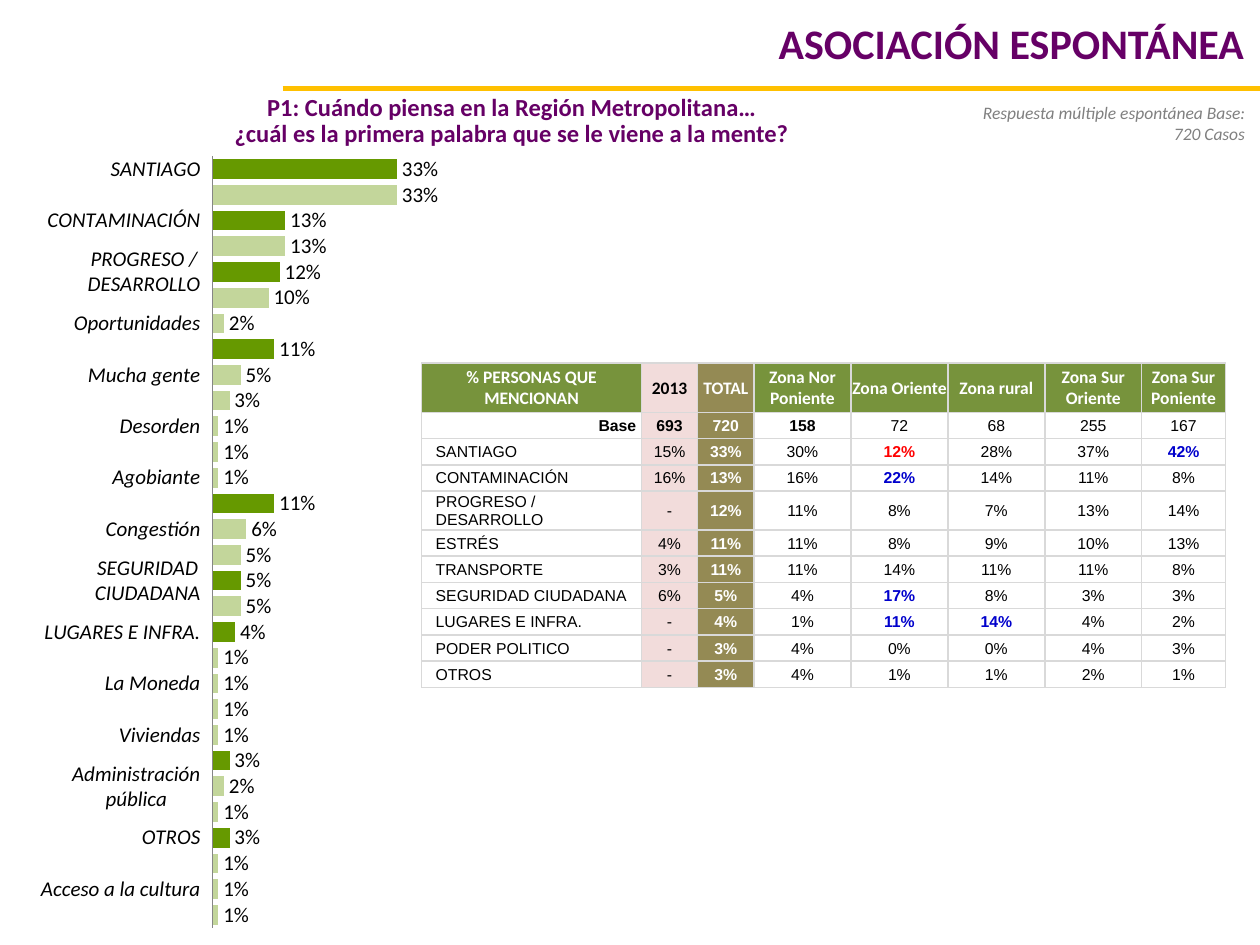
from lxml.etree import SubElement
from pptx import Presentation
from pptx.chart.data import CategoryChartData
from pptx.dml.color import RGBColor
from pptx.enum.chart import XL_CHART_TYPE as ChartType
from pptx.enum.chart import XL_LABEL_POSITION as LabelPos
from pptx.enum.chart import XL_TICK_LABEL_POSITION as TickPos
from pptx.enum.chart import XL_TICK_MARK as TickMark
from pptx.enum.shapes import MSO_CONNECTOR as Connector
from pptx.enum.text import MSO_ANCHOR as Anchor
from pptx.enum.text import PP_ALIGN as Align
from pptx.oxml import parse_xml
from pptx.oxml.ns import nsdecls, qn
from pptx.util import Pt

COLORS = {
    "purple": "660066", "gold": "FFC000", "gray": "808080", "axis": "868686",
    "black": "000000", "white": "FFFFFF", "dark_bar": "669900", "light_bar": "C3D69B",
    "header": "77933C", "year": "F2DCDB", "total": "948A54", "border": "D9D9D9",
    "low": "FF0000", "high": "0000CC",
}

MENTIONS = [
    ("SANTIAGO", 33), ("Santiago", 33), ("CONTAMINACIÓN", 13),
    ("Contaminación ambiental", 13), ("PROGRESO / DESARROLLO", 12),
    ("Ciudad en progreso", 10), ("Oportunidades", 2), ("ESTRÉS", 11),
    ("Mucha gente", 5), ("Locura", 3), ("Desorden", 1), ("Rapidez", 1),
    ("Agobiante", 1), ("TRANSPORTE", 11), ("Congestión", 6), ("Locomoción", 5),
    ("SEGURIDAD CIUDADANA", 5), ("Delincuencia", 5), ("LUGARES E INFRA.", 4),
    ("Cerros y parques", 1), ("La Moneda", 1), ("Sectores de Santiago", 1),
    ("Viviendas", 1), ("PODER POLÍTICO", 3), ("Administración pública", 2),
    ("Gobernantes", 1), ("OTROS", 3), ("Calor", 1), ("Acceso a la cultura", 1),
    ("Inclusión social", 1),
]

ZONES = [
    ["% PERSONAS QUE MENCIONAN", "2013", "TOTAL", "Zona Nor Poniente",
     "Zona Oriente", "Zona rural", "Zona Sur Oriente", "Zona Sur Poniente"],
    ["Base", "693", "720", "158", "72", "68", "255", "167"],
    ["SANTIAGO", "15%", "33%", "30%", "12%", "28%", "37%", "42%"],
    ["CONTAMINACIÓN", "16%", "13%", "16%", "22%", "14%", "11%", "8%"],
    ["PROGRESO / DESARROLLO", "-", "12%", "11%", "8%", "7%", "13%", "14%"],
    ["ESTRÉS", "4%", "11%", "11%", "8%", "9%", "10%", "13%"],
    ["TRANSPORTE", "3%", "11%", "11%", "14%", "11%", "11%", "8%"],
    ["SEGURIDAD CIUDADANA", "6%", "5%", "4%", "17%", "8%", "3%", "3%"],
    ["LUGARES E INFRA.", "-", "4%", "1%", "11%", "14%", "4%", "2%"],
    ["PODER POLITICO", "-", "3%", "4%", "0%", "0%", "4%", "3%"],
    ["OTROS", "-", "3%", "4%", "1%", "1%", "2%", "1%"],
]
COLUMN_WIDTHS = [125.5, 32.2, 32.2] + [55.4] * 4 + [47.8]
HIGHLIGHTS = {(2, 4): "low", (2, 7): "high", (3, 4): "high",
              (7, 4): "high", (8, 4): "high", (8, 5): "high"}


def rgb(name):
    return RGBColor.from_string(COLORS[name])


def set_font(font, color, **formats):
    for key, value in formats.items():
        setattr(font, key, value)
    font.color.rgb = rgb(color)


def paint(fill, color):
    fill.solid()
    fill.fore_color.rgb = rgb(color)


def add_text(s, box, lines, align, anchor, color, para, **formats):
    tf = s.shapes.add_textbox(*map(Pt, box)).text_frame
    tf.word_wrap = True
    tf.vertical_anchor = anchor
    for i, line in enumerate(lines):
        p = tf.paragraphs[0] if i == 0 else tf.add_paragraph()
        p.alignment = align
        for key, value in para.items():
            if i or key != "space_before":
                setattr(p, key, value)
        r = p.add_run()
        r.text = line
        set_font(r.font, color, name="Calibri", **formats)


def add_heading(s, box):
    left, top, width, height = box
    add_text(s, (left + 58, top, width - 60, 49), ["ASOCIACIÓN ESPONTÁNEA"],
             Align.RIGHT, Anchor.MIDDLE, "purple", {}, size=Pt(24), bold=True)
    rule = s.shapes.add_connector(
        Connector.STRAIGHT, Pt(left + 161.5), Pt(top + 50.4),
        Pt(left + width), Pt(top + 50.4))
    rule.line.color.rgb = rgb("gold")
    rule.line.width = Pt(3)
    SubElement(rule._element.spPr, qn("a:effectLst"))
    question = ["P1: Cuándo piensa en la Región Metropolitana…",
                "¿cuál es la primera palabra que se le viene a la mente?"]
    add_text(s, (left + 48.5, top + 54, 488, 34.5), question, Align.CENTER,
             Anchor.TOP, "purple", {"line_spacing": Pt(12), "space_before": Pt(2.8)},
             size=Pt(14), bold=True)
    add_text(s, (left + 541.5, top + 54.7, 177, 31.5),
             ["Respuesta múltiple espontánea Base: 720 Casos"], Align.RIGHT,
             Anchor.TOP, "gray", {}, size=Pt(10), italic=True)


def add_mentions_chart(s, box):
    data = CategoryChartData(number_format="###0%")
    data.categories = [name for name, _ in MENTIONS]
    data.add_series("Series 1", [value / 100 for _, value in MENTIONS])
    chart = s.shapes.add_chart(ChartType.BAR_CLUSTERED, *map(Pt, box), data).chart
    chart.has_legend = chart.has_title = False
    set_font(chart.font, "black", name="Calibri", size=Pt(12))

    axis = chart.category_axis
    for key, value in {"reverse_order": True, "has_major_gridlines": False,
                       "major_tick_mark": TickMark.NONE,
                       "tick_label_position": TickPos.LOW}.items():
        setattr(axis, key, value)
    set_font(axis.tick_labels.font, "black", name="Calibri", size=Pt(12), italic=True)
    axis.format.line.color.rgb = rgb("axis")
    for key, value in {"visible": False, "minimum_scale": 0, "maximum_scale": 0.6,
                       "has_major_gridlines": False}.items():
        setattr(chart.value_axis, key, value)

    plot = chart.plots[0]
    plot.gap_width = 30
    plot.vary_by_categories = False
    plot.has_data_labels = True
    labels = plot.data_labels
    for key, value in {"show_value": True, "number_format": "###0%",
                       "number_format_is_linked": False,
                       "position": LabelPos.OUTSIDE_END}.items():
        setattr(labels, key, value)
    set_font(labels.font, "black", name="Calibri", size=Pt(12))
    series = plot.series[0]
    paint(series.format.fill, "light_bar")
    for i, (name, _) in enumerate(MENTIONS):
        if name.isupper():
            paint(series.points[i].format.fill, "dark_bar")

    area = chart._chartSpace.chart.plotArea
    for old in area.findall(qn("c:layout")):
        area.remove(old)
    sizes = "".join(f'<c:{key} val="{value}"/>' for key, value in
                    [("x", 0.357), ("y", 0.002), ("w", 0.638), ("h", 0.998)])
    area.insert(0, parse_xml(
        f'<c:layout {nsdecls("c")}><c:manualLayout><c:layoutTarget val="inner"/>'
        f'<c:xMode val="edge"/><c:yMode val="edge"/>{sizes}</c:manualLayout></c:layout>'))


def add_borders(cell):
    props = cell._tc.get_or_add_tcPr()
    for i, side in enumerate(("lnL", "lnR", "lnT", "lnB")):
        props.insert(i, parse_xml(
            f'<a:{side} {nsdecls("a")} w="12700"><a:solidFill>'
            f'<a:srgbClr val="{COLORS["border"]}"/></a:solidFill></a:{side}>'))


def fill_zone_cell(cell, row, col, text):
    header = row == 0
    background = {1: "year", 2: "total"}.get(col, "header" if header else "white")
    color = "white" if background in ("header", "total") else "black"
    bold = header or col == 2 or (row == 1 and col <= 3) or (row, col) in HIGHLIGHTS
    item = col == 0 and row > 1
    base = col == 0 and row == 1
    for key, value in {"vertical_anchor": Anchor.MIDDLE,
                       "margin_left": Pt(8 if item else 0.6),
                       "margin_right": Pt(3 if base else 0.6),
                       "margin_top": Pt(0.6), "margin_bottom": Pt(0)}.items():
        setattr(cell, key, value)
    paint(cell.fill, background)
    add_borders(cell)
    p = cell.text_frame.paragraphs[0]
    p.alignment = Align.LEFT if item else Align.RIGHT if base else Align.CENTER
    r = p.add_run()
    r.text = text
    set_font(r.font, HIGHLIGHTS.get((row, col), color), bold=bold,
             name="Calibri" if header else "Arial", size=Pt(10 if header else 9))


def add_zones_table(s, box):
    table = s.shapes.add_table(len(ZONES), len(COLUMN_WIDTHS), *map(Pt, box)).table
    table.first_row = table.horz_banding = False
    for column, width in zip(table.columns, COLUMN_WIDTHS):
        column.width = Pt(width)
    for row, texts in enumerate(ZONES):
        table.rows[row].height = Pt(15 if row else 28.2)
        for col, text in enumerate(texts):
            fill_zone_cell(table.cell(row, col), row, col, text)


def main():
    prs = Presentation()
    prs.slide_width, prs.slide_height = Pt(720), Pt(540)
    s = prs.slides.add_slide(prs.slide_layouts[6])
    add_heading(s, (0, 0, 720, 90))
    add_mentions_chart(s, (14.5, 88.5, 300, 442))
    add_zones_table(s, (241, 207.4, sum(COLUMN_WIDTHS), 178.2))
    prs.save("out.pptx")


if __name__ == "__main__":
    main()
